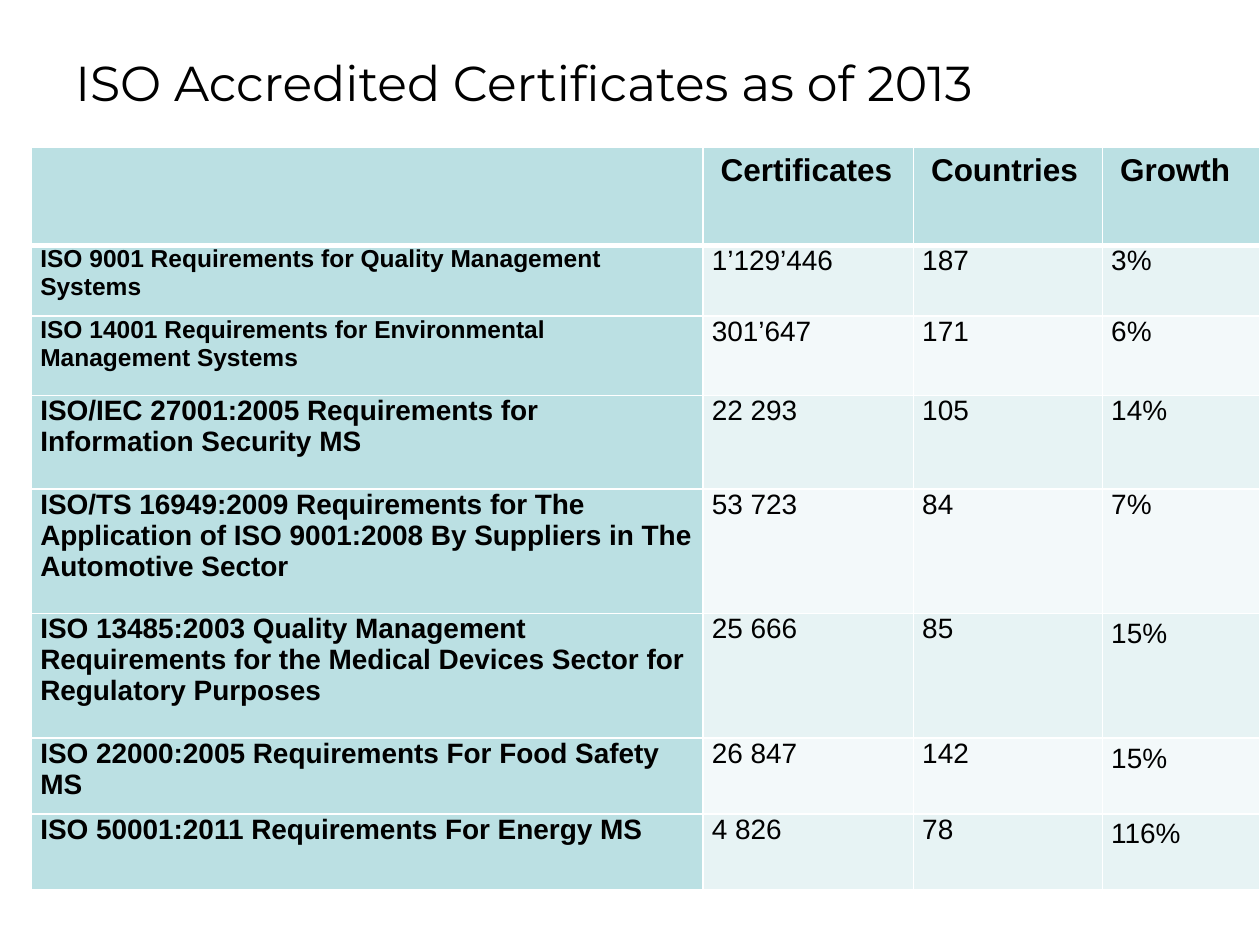
from lxml import etree
from pptx import Presentation
from pptx import util as u
from pptx.dml.color import RGBColor
from pptx.enum import text
from pptx.oxml.ns import qn


def write(para, words, size, font, bold=False):
    run = para.add_run()
    run.text = words
    run.font.size = u.Pt(size)
    run.font.name = font
    run.font.bold = bold
    run.font.color.rgb = RGBColor.from_string("000000")


def edge(cell, side, width):
    """Draw a white border on one side (L, R, T or B); call before the fill."""
    line = etree.SubElement(cell._tc.get_or_add_tcPr(), qn(f"a:ln{side}"), w=str(u.Pt(width)))
    fill = etree.SubElement(line, qn("a:solidFill"))
    etree.SubElement(fill, qn("a:srgbClr"), val="FFFFFF")


heads = ["", "Certificates", "Countries", "Growth"]
# name, certificates, countries, growth, name size, row height, growth line spacing
rows = [
    ("ISO 9001 Requirements for Quality Management Systems",
     "1’129’446", "187", "3%", 14, 0.56, 1),
    ("ISO 14001 Requirements for Environmental Management Systems",
     "301’647", "171", "6%", 14, 0.63, 1),
    ("ISO/IEC 27001:2005 Requirements for Information Security MS",
     "22 293", "105", "14%", 16, 0.74, 1),
    ("ISO/TS 16949:2009 Requirements for The Application of ISO 9001:2008 "
     "By Suppliers in The Automotive Sector",
     "53 723", "84", "7%", 16, 0.99, 1),
    ("ISO 13485:2003 Quality Management Requirements for the Medical Devices "
     "Sector for Regulatory Purposes",
     "25 666", "85", "15%", 16, 0.99, 1.15),
    ("ISO 22000:2005 Requirements For Food Safety MS",
     "26 847", "142", "15%", 16, 0.6, 1.15),
    ("ISO 50001:2011 Requirements For Energy MS",
     "4 826", "78", "116%", 16, 0.6, 1.15),
]
widths = [5.33, 1.67, 1.5, 1.25]
highs = [0.78] + [row[5] for row in rows]

deck = Presentation()
deck.slide_width, deck.slide_height = u.Inches(10), u.Inches(7.5)
slide = deck.slides.add_slide(deck.slide_layouts[6])

title = slide.shapes.add_textbox(u.Inches(0.5), u.Inches(0.3), u.Inches(9), u.Inches(0.7))
frame = title.text_frame
frame.word_wrap = True
frame.vertical_anchor = text.MSO_ANCHOR.MIDDLE
write(frame.paragraphs[0], "ISO Accredited Certificates as of 2013", 28, "Montserrat")

table = slide.shapes.add_table(
    len(highs), len(widths), u.Inches(0.25), u.Inches(1.17),
    u.Inches(sum(widths)), u.Inches(sum(highs))).table
table.horz_banding = False
for col, width in zip(table.columns, widths):
    col.width = u.Inches(width)
for row, high in zip(table.rows, highs):
    row.height = u.Inches(high)

for r in range(len(highs)):
    for c in range(len(widths)):
        cell = table.cell(r, c)
        head = r == 0
        edge(cell, "L", 1)
        edge(cell, "R", 1)
        edge(cell, "T", 3 if r == 1 else 1)
        edge(cell, "B", 3 if head else 1)
        band = "E7F3F4" if r % 2 else "F3F9FA"
        cell.fill.solid()
        cell.fill.fore_color.rgb = RGBColor.from_string("BBE0E3" if head or c == 0 else band)
        cell.margin_left = u.Inches(0.14 if head else 0.07)
        cell.margin_right = u.Inches(0.07)
        cell.margin_top = cell.margin_bottom = 0
        para = cell.text_frame.paragraphs[0]
        if head:
            para.line_spacing = 1.15
            if heads[c]:
                write(para, heads[c], 18, "Arial", True)
        else:
            item = rows[r - 1]
            if c == 3:
                para.line_spacing = item[6]
            write(para, item[c], 16 if c else item[4], "Arial", c == 0)

deck.save("out.pptx")
